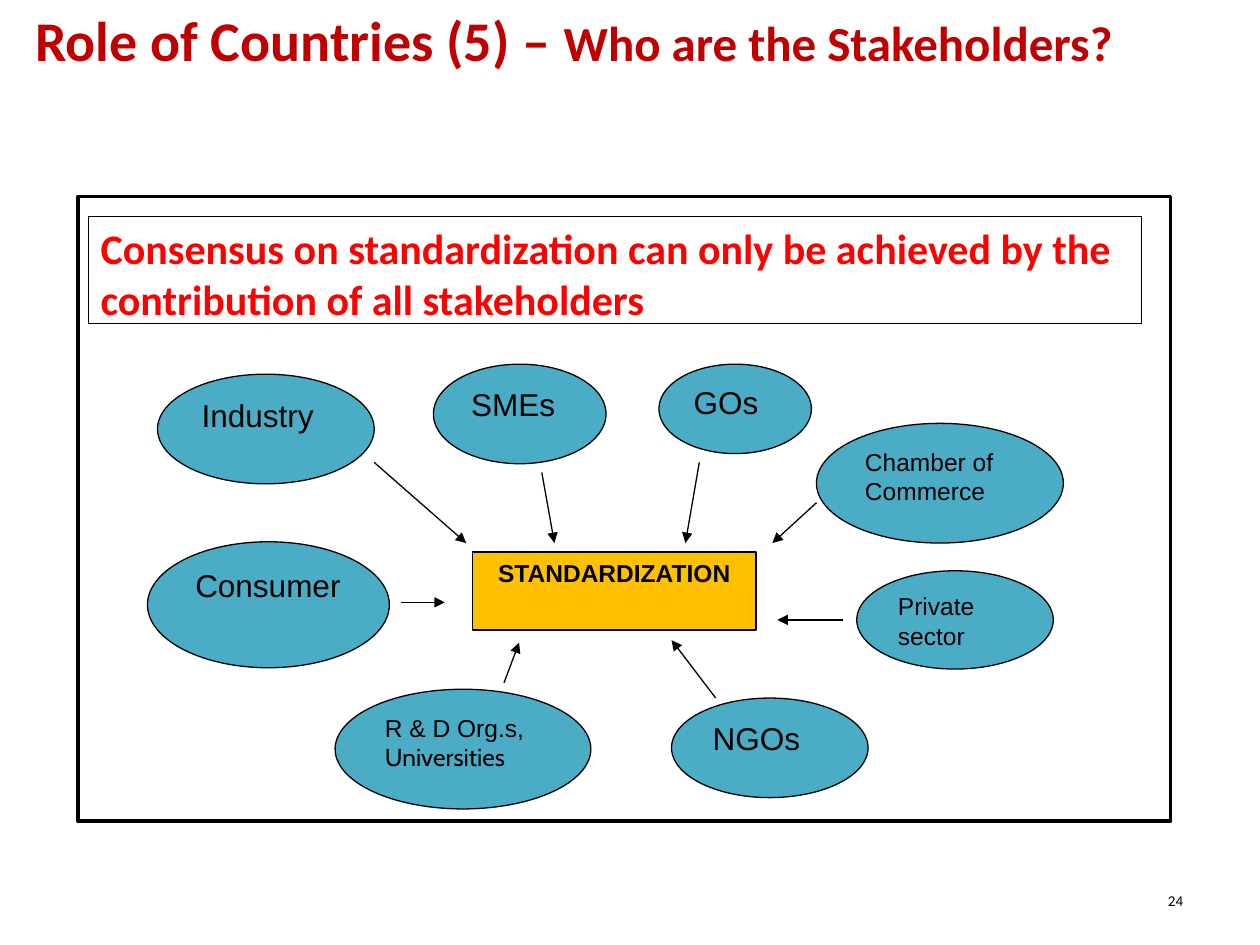
from pptx import Presentation
from pptx.dml.color import RGBColor
from pptx.enum.shapes import MSO_CONNECTOR, MSO_SHAPE
from pptx.enum.text import MSO_ANCHOR, MSO_AUTO_SIZE, PP_ALIGN
from pptx.oxml.ns import qn
from pptx.util import Inches, Pt
from lxml.etree import SubElement

COLS, ROWS = 100, 75
WIDE, HIGH = Inches(10), Inches(7.5)
BLACK, TEAL, GOLD = "000000", "4BACC6", "FFC000"
RED, DARK, WHITE = "FF0000", "C00000", "FFFFFF"

GROUPS = [
    ("Industry", 18, (12.5, 29.7, 17.2, 8.7)),
    ("SMEs", 18, (34.4, 28.9, 13.7, 7.9)),
    ("GOs", 18, (52.3, 28.9, 12.1, 7.1)),
    ("Chamber of Commerce", 14, (64.8, 33.6, 19.6, 9.5)),
    ("Consumer", 18, (11.7, 43, 19.2, 10)),
    ("NGOs", 18, (53.3, 55.4, 15.6, 7.9)),
    ("Private sector", 14, (68, 45.3, 15.6, 7.8)),
    ("R & D Org.s,\nUniversities", 14, (26.6, 54.7, 20.3, 9.5)),
]
ARROWS = [
    (56.8, 55.4, 53.3, 50.8),
    (66.9, 49.2, 61.7, 49.2),
    (64.8, 39.9, 61.3, 43.1),
    (55.5, 36.7, 54.4, 43.1),
    (43, 37.5, 44, 43.1),
    (29.7, 36.7, 37, 43.1),
    (40, 54.2, 41.2, 51),
    (31.8, 47.8, 35.3, 47.8),
]


def color(text):
    """Turn a hex string into a colour."""
    return RGBColor.from_string(text)


def place(cells):
    """Turn column, row pairs into slide lengths."""
    steps = (WIDE / COLS, HIGH / ROWS) * 2
    return [round(cell * step) for cell, step in zip(cells, steps)]


def style(para, size, name="Arial", tint=BLACK, bold=False, align=PP_ALIGN.LEFT):
    """Set the font and alignment of a paragraph."""
    para.alignment = align
    font = para.font
    font.size, font.name, font.bold = Pt(size), name, bold
    font.color.rgb = color(tint)


def write(shape, text, size, **look):
    """Write styled lines from the top of a shape."""
    frame = shape.text_frame
    frame.word_wrap = True
    frame.vertical_anchor = MSO_ANCHOR.TOP
    frame.text = text
    for para in frame.paragraphs:
        style(para, size, **look)
    return frame


def draw(slide, kind, cells, fill=None, line=0.75):
    """Add a black-edged shape, filled if a colour is given."""
    shape = slide.shapes.add_shape(kind, *place(cells))
    shape.shadow.inherit = False
    if fill:
        shape.fill.solid()
        shape.fill.fore_color.rgb = color(fill)
    else:
        shape.fill.background()
    shape.line.color.rgb = color(BLACK)
    shape.line.width = Pt(line)
    return shape


def arrow(slide, cells):
    """Add a thin line with a triangle at its end."""
    link = slide.shapes.add_connector(MSO_CONNECTOR.STRAIGHT, *place(cells))
    link.line.color.rgb = color(BLACK)
    link.line.width = Pt(0.75)
    SubElement(link.line._get_or_add_ln(), qn("a:tailEnd"), type="triangle")
    SubElement(link._element.spPr, qn("a:effectLst"))


def head(slide):
    """Fill the title with a large and a smaller part."""
    title = slide.shapes.title
    title.left, title.top, title.width, title.height = place((1.8, -0.1, 91.3, 6.4))
    frame = title.text_frame
    frame.word_wrap = True
    frame.auto_size = MSO_AUTO_SIZE.NONE
    frame.vertical_anchor = MSO_ANCHOR.TOP
    para = frame.paragraphs[0]
    style(para, 32, "Calibri", DARK, True)
    for text, size in (("Role of Countries (5) – ", 32), ("Who are the Stakeholders?", 28)):
        run = para.add_run()
        run.text, run.font.size = text, Pt(size)


def number(slide, text):
    """Add the page number at the lower right."""
    box = slide.shapes.add_textbox(*place((83.1, 69.5, 11.9, 4)))
    frame = write(box, text, 8.6, name="Calibri", align=PP_ALIGN.RIGHT)
    frame.vertical_anchor = MSO_ANCHOR.MIDDLE
    frame.margin_left = frame.margin_right = Inches(0.11)


def main():
    """Build and save the slide."""
    deck = Presentation()
    deck.slide_width, deck.slide_height = WIDE, HIGH
    slide = deck.slides.add_slide(deck.slide_layouts[5])
    head(slide)
    number(slide, "24")
    draw(slide, MSO_SHAPE.RECTANGLE, (6.2, 15.6, 86.7, 49.6), line=2.25)
    claim = draw(slide, MSO_SHAPE.RECTANGLE, (7, 17.2, 83.6, 8.5), WHITE)
    write(claim, "Consensus on standardization can only be achieved by the "
          "contribution of all stakeholders", 24, name="Calibri", tint=RED, bold=True)
    hub = draw(slide, MSO_SHAPE.RECTANGLE, (37.5, 43.8, 22.5, 6.2), GOLD)
    write(hub, "STANDARDIZATION", 14, bold=True, align=PP_ALIGN.CENTER)
    for text, size, cells in GROUPS:
        frame = write(draw(slide, MSO_SHAPE.OVAL, cells, TEAL), text, size)
    frame.paragraphs[-1].font.name = "Cabin"
    for cells in ARROWS:
        arrow(slide, cells)
    deck.save("out.pptx")


if __name__ == "__main__":
    main()
